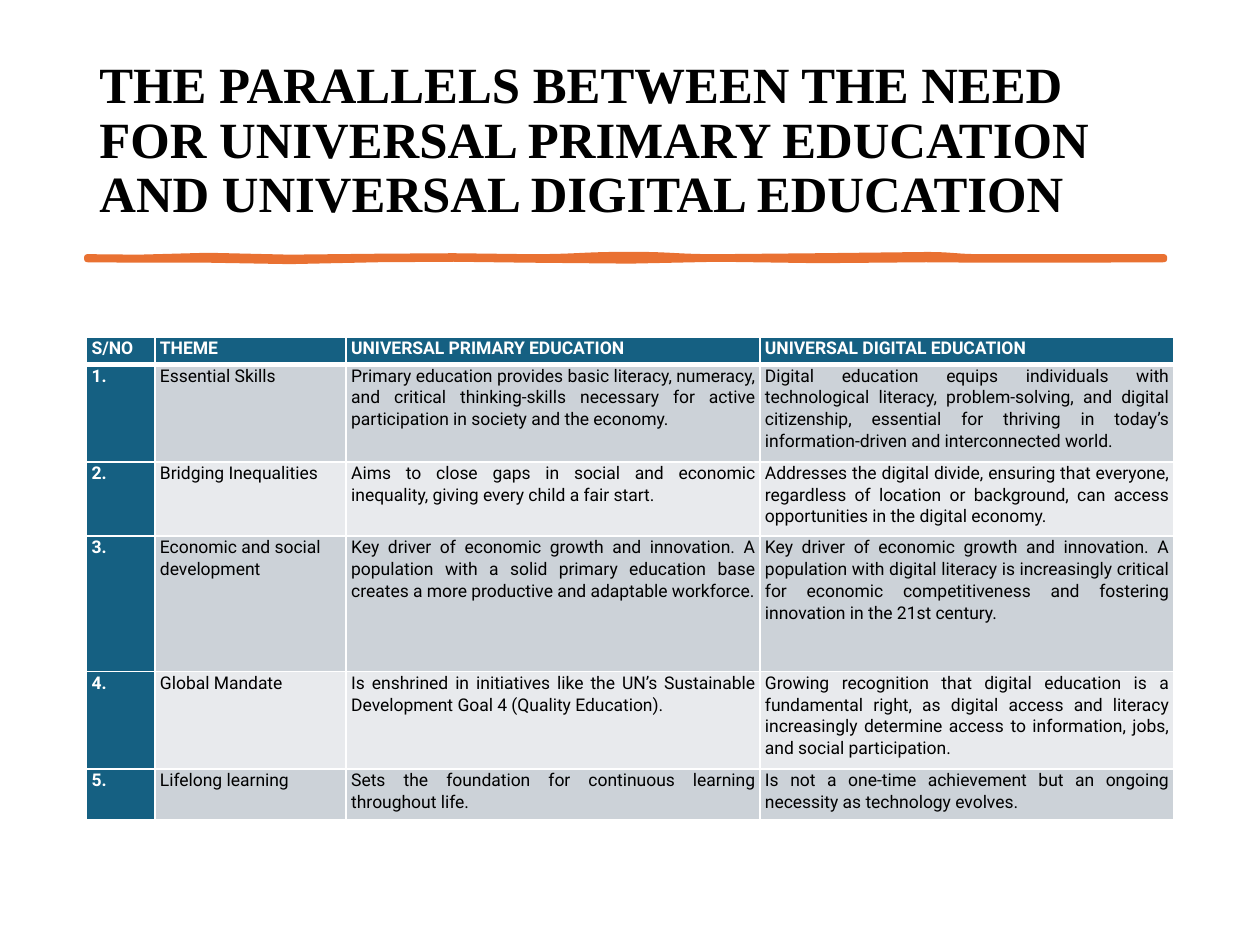
from typing import NamedTuple

from lxml.etree import SubElement
from pptx import Presentation
from pptx.dml.color import RGBColor
from pptx.enum.text import MSO_ANCHOR as Anchor, PP_ALIGN as Align
from pptx.oxml.ns import qn
from pptx.util import Emu, Inches, Pt

WIDE, HIGH = Inches(10), Inches(7.5)
HUES = {"black": "000000", "white": "FFFFFF", "blue": "156082",
        "orange": "E97132", "dark": "CCD2D8", "light": "E8EAED"}

# Lengths are percent of the slide's width or height
LEFT = 6.88
COLS = [5.42, 15.18, 32.84, 32.84]
HEAD_ROW = 2.87
TITLE = ("THE PARALLELS BETWEEN THE NEED FOR UNIVERSAL PRIMARY EDUCATION "
         "AND UNIVERSAL DIGITAL EDUCATION")
HEADS = ["S/NO", "THEME", "UNIVERSAL PRIMARY EDUCATION",
         "UNIVERSAL DIGITAL EDUCATION"]


class Theme(NamedTuple):
    name: str
    primary: str
    digital: str
    height: float


class Knot(NamedTuple):
    x: float
    top: float
    base: float


THEMES = [
    Theme("Essential Skills",
          "Primary education provides basic literacy, numeracy, and critical "
          "thinking-skills necessary for active participation in society and "
          "the economy.",
          "Digital education equips individuals with technological literacy, "
          "problem-solving, and digital citizenship, essential for thriving in "
          "today’s information-driven and interconnected world.", 10.3),
    Theme("Bridging Inequalities",
          "Aims to close gaps in social and economic inequality, giving every "
          "child a fair start.",
          "Addresses the digital divide, ensuring that everyone, regardless of "
          "location or background, can access opportunities in the digital "
          "economy.", 7.87),
    Theme("Economic and social development",
          "Key driver of economic growth and innovation. A population with a "
          "solid primary education base creates a more productive and "
          "adaptable workforce.",
          "Key driver of economic growth and innovation. A population with "
          "digital literacy is increasingly critical for economic "
          "competitiveness and fostering innovation in the 21st century.", 14.35),
    Theme("Global Mandate",
          "Is enshrined in initiatives like the UN’s Sustainable Development "
          "Goal 4 (Quality Education).",
          "Growing recognition that digital education is a fundamental right, "
          "as digital access and literacy increasingly determine access to "
          "information, jobs, and social participation.", 10.3),
    Theme("Lifelong learning",
          "Sets the foundation for continuous learning throughout life.",
          "Is not a one-time achievement but an ongoing necessity as "
          "technology evolves.", 5.37),
]

KNOTS = [Knot(6.9, 27.2, 27.45), Knot(11, 27.25, 27.5),
         Knot(16.5, 27.05, 27.5), Knot(23, 27.25, 27.65),
         Knot(30, 27.15, 27.45), Knot(36, 27.1, 27.4),
         Knot(42, 27.2, 27.5), Knot(50, 26.95, 27.6),
         Knot(57, 27.2, 27.4), Knot(65, 27.1, 27.55),
         Knot(73.5, 26.97, 27.45), Knot(78, 27.2, 27.5),
         Knot(85, 27.2, 27.5), Knot(92.4, 27.2, 27.45)]


def across(share: float) -> Emu:
    return Emu(round(WIDE * share / 100))


def down(share: float) -> Emu:
    return Emu(round(HIGH * share / 100))


def hue(name: str) -> RGBColor:
    return RGBColor.from_string(HUES[name])


def style(par, face: str, size: float, tint: str, bold: bool) -> None:
    font = par.font
    font.name, font.size, font.bold = face, Pt(size), bold
    font.color.rgb = hue(tint)


def add_title(slide) -> None:
    box = slide.shapes.add_textbox(across(6.9), down(5.33),
                                   across(86.2), down(19.33))
    frame = box.text_frame
    frame.word_wrap = True
    frame.vertical_anchor = Anchor.MIDDLE
    par = frame.paragraphs[0]
    par.text, par.line_spacing = TITLE, 0.9
    style(par, "Times New Roman", 29, "black", True)


def bend(shape) -> None:
    """Turn each straight segment into a curve that is level at both ends."""
    last = None
    for point in list(shape._element.iter(qn("a:pt"))):
        x, y = int(point.get("x")), int(point.get("y"))
        if last:
            mid = (last[0] + x) // 2
            part = point.getparent()
            part.tag = qn("a:cubicBezTo")
            for place, height in enumerate((last[1], y)):
                hand = SubElement(part, qn("a:pt"), x=str(mid), y=str(height))
                part.insert(place, hand)
        last = x, y


def add_stroke(slide) -> None:
    top = [(across(knot.x), down(knot.top)) for knot in KNOTS]
    base = [(across(knot.x), down(knot.base)) for knot in KNOTS]
    form = slide.shapes.build_freeform(*top[0], scale=1.0)
    form.add_line_segments(top[1:] + base[::-1], close=True)
    wave = form.convert_to_shape()
    bend(wave)
    wave.shadow.inherit = False
    wave.fill.solid()
    wave.fill.fore_color.rgb = hue("orange")
    wave.line.color.rgb = hue("orange")
    wave.line.width = Pt(3.25)
    SubElement(wave._element.spPr.find(qn("a:ln")), qn("a:round"))


def add_edges(cell, base: float) -> None:
    props = cell._tc.get_or_add_tcPr()
    for side, width in zip("LRTB", (1, 1, 1, base)):
        edge = SubElement(props, qn(f"a:ln{side}"), w=str(Pt(width)))
        fill = SubElement(edge, qn("a:solidFill"))
        SubElement(fill, qn("a:srgbClr"), val=HUES["white"])


def fill_cell(cell, text: str, back: str, base: float, just: bool) -> None:
    add_edges(cell, base)
    cell.fill.solid()
    cell.fill.fore_color.rgb = hue(back)
    cell.margin_left = cell.margin_right = Inches(0.04)
    cell.margin_top = cell.margin_bottom = 0
    par = cell.text_frame.paragraphs[0]
    par.text, par.line_spacing, par.space_after = text, 1.07, Pt(8)
    if just:
        par.alignment = Align.JUSTIFY
    strong = back == "blue"
    style(par, "Roboto", 10, "white" if strong else "black", strong)


def add_grid(slide) -> None:
    rows = [HEAD_ROW] + [theme.height for theme in THEMES]
    grid = slide.shapes.add_table(
        len(rows), len(COLS), across(LEFT), down(35.7),
        across(sum(COLS)), down(sum(rows))).table
    for col, share in zip(grid.columns, COLS):
        col.width = across(share)
    for row, share in zip(grid.rows, rows):
        row.height = down(share)
    for c, head in enumerate(HEADS):
        fill_cell(grid.cell(0, c), head, "blue", 3, False)
    for r, theme in enumerate(THEMES, 1):
        band = "dark" if r % 2 else "light"
        texts = [f"{r}.", theme.name, theme.primary, theme.digital]
        for c, text in enumerate(texts):
            fill_cell(grid.cell(r, c), text, band if c else "blue", 1, c > 1)


def main() -> None:
    deck = Presentation()
    deck.slide_width, deck.slide_height = WIDE, HIGH
    slide = deck.slides.add_slide(deck.slide_layouts[6])
    add_title(slide)
    add_stroke(slide)
    add_grid(slide)
    deck.save("out.pptx")


if __name__ == "__main__":
    main()
